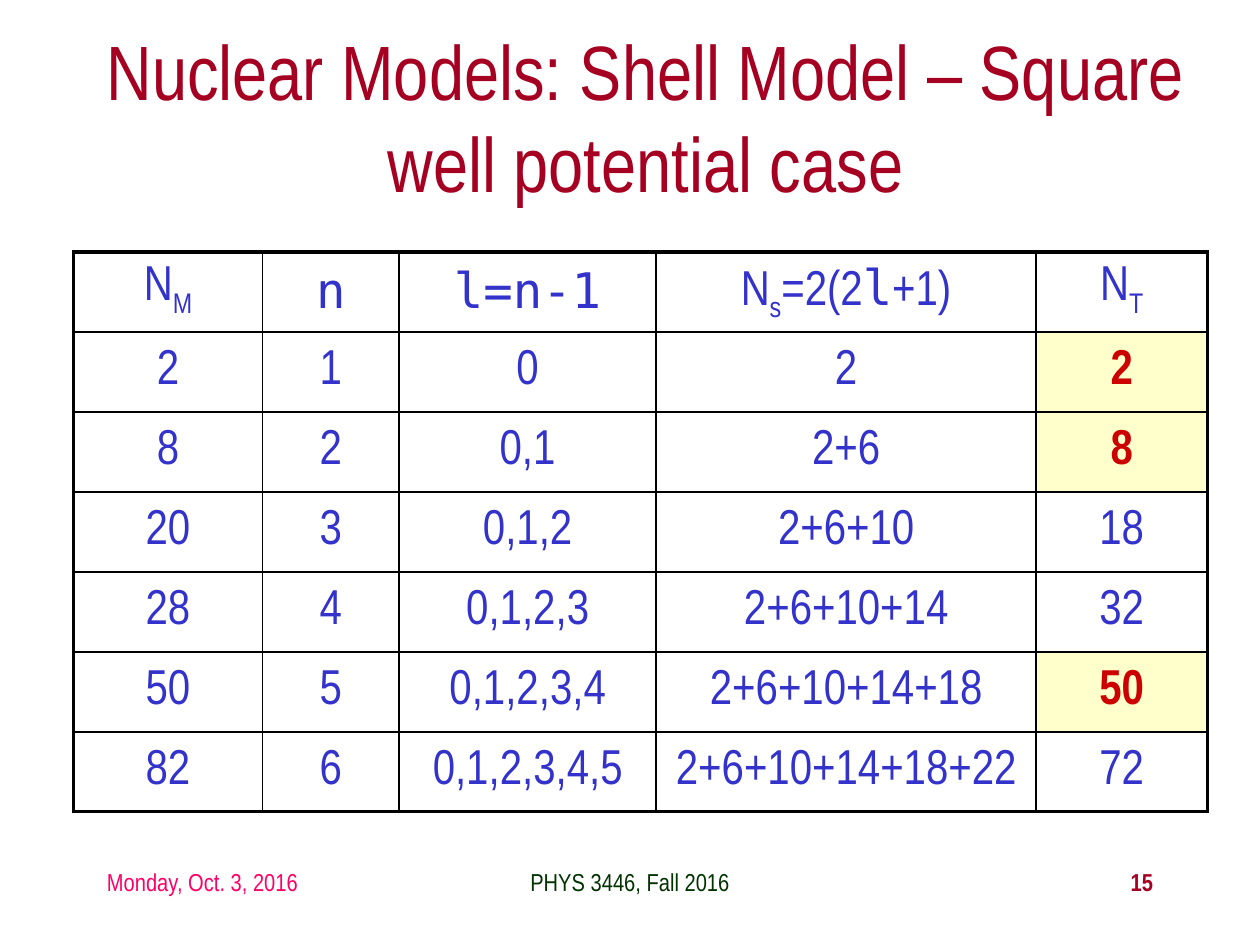
import pptx
import pptx.util
import pptx.dml.color
import pptx.enum.text
import pptx.oxml
import pptx.oxml.ns

Pt = pptx.util.Pt
ALIGN = pptx.enum.text.PP_ALIGN
MIDDLE = pptx.enum.text.MSO_ANCHOR.MIDDLE
SANS, MONO = "Arial Narrow", "DejaVu Sans Mono"


def style(font, size, color, bold=False, name=SANS):
    font.size = Pt(size)
    font.name = name
    font.bold = bold
    font.color.rgb = pptx.dml.color.RGBColor.from_string(color)


def border(cell, side, width):
    line = pptx.oxml.parse_xml(
        f'<a:{side} {pptx.oxml.ns.nsdecls("a")} w="{Pt(width)}">'
        f'<a:solidFill><a:srgbClr val="000000"/></a:solidFill></a:{side}>')
    cell._tc.get_or_add_tcPr().append(line)


deck = pptx.Presentation()
deck.slide_width, deck.slide_height = Pt(720), Pt(540)
slide = deck.slides.add_slide(deck.slide_layouts[5])

# Title
title = slide.shapes.title
title.left, title.top, title.width, title.height = Pt(36), Pt(18), Pt(666), Pt(96)
frame = title.text_frame
frame.text = "Nuclear Models: Shell Model – Square well potential case"
frame.auto_size = pptx.enum.text.MSO_AUTO_SIZE.NONE
frame.vertical_anchor = MIDDLE
frame.paragraphs[0].alignment = ALIGN.CENTER
style(frame.paragraphs[0].font, 44, "A50021")

# Header cells as runs: text, font, subscript
heads = [
    [("N", SANS, False), ("M", SANS, True)],
    [("n", MONO, False)],
    [("l=n-1", MONO, False)],
    [("N", SANS, False), ("s", SANS, True), ("=2(2", SANS, False),
     ("l", MONO, False), ("+1)", SANS, False)],
    [("N", SANS, False), ("T", SANS, True)],
]

# Body rows: l runs from 0 to n-1, each step adds a larger shell
magic = [2, 8, 20, 28, 50, 82]
rows = [heads]
for n, number in enumerate(magic, 1):
    shells = [2 * (2 * l + 1) for l in range(n)]
    values = [number, n, ",".join(map(str, range(n))),
              "+".join(map(str, shells)), sum(shells[-1:]) if n == 1 else 2 * n * n]
    rows.append([[(str(value), SANS, False)] for value in values])

# Table
widths = [108, 78, 147, 217, 98]
table = slide.shapes.add_table(len(rows), len(widths), Pt(42), Pt(144),
                               Pt(sum(widths)), Pt(320)).table
table.first_row = table.horz_banding = False
for column, width in zip(table.columns, widths):
    column.width = Pt(width)

last_row, last_col = len(rows) - 1, len(widths) - 1
for r, row in enumerate(rows):
    table.rows[r].height = Pt(45.7)
    for c, runs in enumerate(row):
        cell = table.cell(r, c)
        cell.vertical_anchor = MIDDLE
        outer = {"lnL": c == 0, "lnR": c == last_col,
                 "lnT": r == 0, "lnB": r == last_row}
        for side, thick in outer.items():
            border(cell, side, 2.25 if thick else 1)

        # Totals that match a magic number stand out
        match = r > 0 and c == last_col and int(runs[0][0]) in magic
        if match:
            cell.fill.solid()
            cell.fill.fore_color.rgb = pptx.dml.color.RGBColor.from_string("FFFFCC")
        else:
            cell.fill.background()

        para = cell.text_frame.paragraphs[0]
        para.alignment = ALIGN.CENTER
        for text, name, sub in runs:
            run = para.add_run()
            run.text = text
            style(run.font, 28, "CC0000" if match else "3333CC", match, name)
            if sub:
                run._r.get_or_add_rPr().set("baseline", "-25000")

# Footer
for text, left, width, align, color, bold in [
    ("Monday, Oct. 3, 2016", 54, 168, ALIGN.LEFT, "FF0066", False),
    ("PHYS 3446, Fall 2016", 246, 228, ALIGN.CENTER, "003300", False),
    ("15", 516, 150, ALIGN.RIGHT, "A50021", True),
]:
    box = slide.shapes.add_textbox(Pt(left), Pt(492), Pt(width), Pt(36))
    box.text_frame.word_wrap = True
    para = box.text_frame.paragraphs[0]
    para.text = text
    para.alignment = align
    style(para.font, 14, color, bold)

deck.save("out.pptx")
